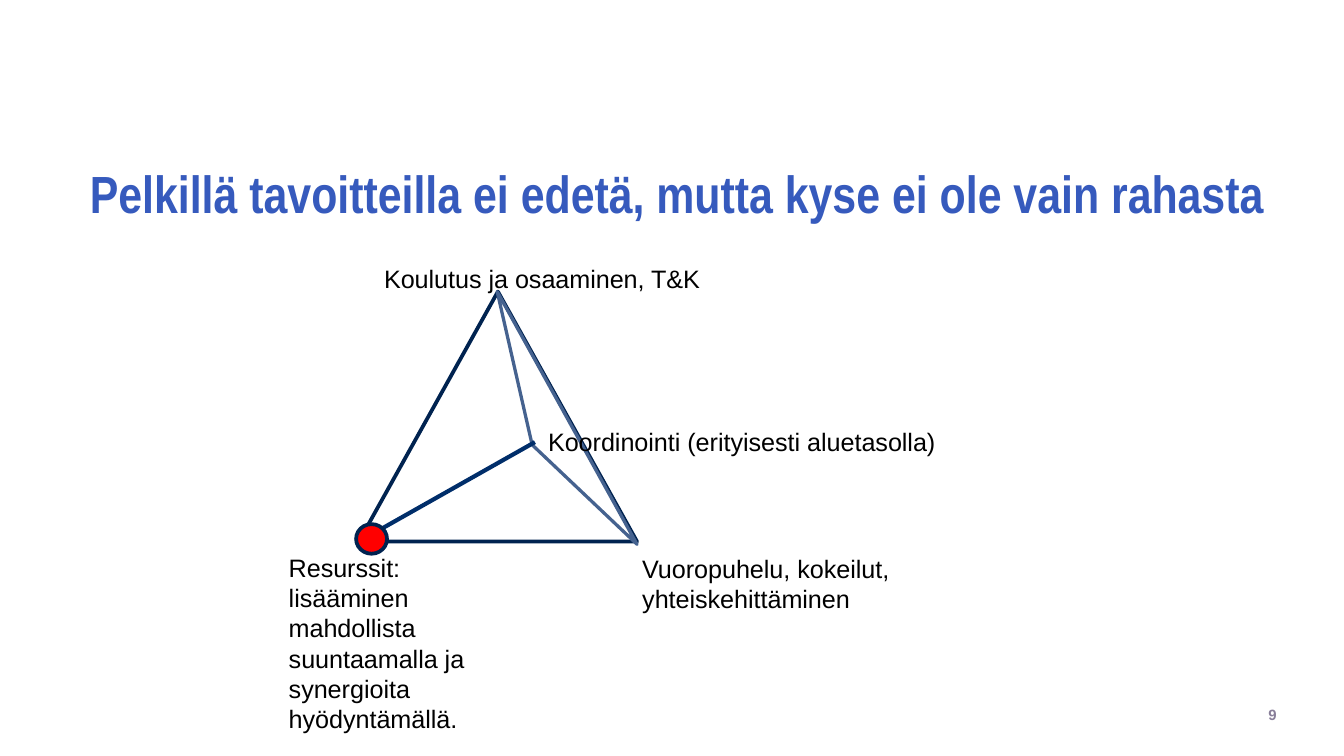
"""Build a slide with a pyramid of four linked success factors."""
from lxml import etree
from pptx import Presentation
from pptx.dml.color import RGBColor
from pptx.enum.shapes import MSO_CONNECTOR, MSO_SHAPE
from pptx.enum.text import MSO_ANCHOR, PP_ALIGN
from pptx.oxml.ns import qn
from pptx.util import Inches, Pt

STRAIGHT = MSO_CONNECTOR.STRAIGHT
TRIANGLE, OVAL = MSO_SHAPE.ISOSCELES_TRIANGLE, MSO_SHAPE.OVAL
TOP, MIDDLE, BOTTOM = MSO_ANCHOR.TOP, MSO_ANCHOR.MIDDLE, MSO_ANCHOR.BOTTOM
LEFT, RIGHT = PP_ALIGN.LEFT, PP_ALIGN.RIGHT

BLUE = RGBColor(0x36, 0x5A, 0xBD)
NAVY = RGBColor(0x00, 0x23, 0x50)
EDGE_BLUE = RGBColor(0x00, 0x2E, 0x6A)
SLATE = RGBColor(0x45, 0x62, 0x8F)
GREY = RGBColor(0x88, 0x7E, 0x99)
RED = RGBColor(0xFF, 0x00, 0x00)
BLACK = RGBColor(0x00, 0x00, 0x00)

TITLE = "Pelkillä tavoitteilla ei edetä, mutta kyse ei ole vain rahasta"
PAGE_NUMBER = "9"
LABELS = [
    ("Resurssit: lisääminen mahdollista suuntaamalla ja synergioita hyödyntämällä.",
     (2.05, 4.06, 1.78, 1.46)),
    ("Koordinointi (erityisesti aluetasolla)", (3.98, 3.12, 5, 0.33)),
    ("Koulutus ja osaaminen, T&K", (2.76, 1.91, 2.64, 0.33)),
    ("Vuoropuhelu, kokeilut, yhteiskehittäminen", (4.68, 4.07, 2.71, 0.56)),
]
FRONT_FACE = (2.67, 2.17, 2.07, 1.86)
SIDE_FACE = [(3.7, 2.17), (3.96, 3.31), (4.74, 4.05)]
INNER_EDGE = (2.67, 4.03, 3.98, 3.29)
RESOURCE_DOT = (2.65, 3.9, 0.23, 0.22)


def inches(values):
    return [Inches(v) for v in values]


def add_text(s, text, box, size, color, font="Arial", bold=False, anchor=TOP, align=LEFT):
    tf = s.shapes.add_textbox(*inches(box)).text_frame
    tf.word_wrap = True
    tf.vertical_anchor = anchor
    p = tf.paragraphs[0]
    p.text = text
    p.alignment = align
    p.font.name, p.font.size, p.font.bold = font, Pt(size), bold
    p.font.color.rgb = color
    return tf


def style(sp, color, width, fill=None):
    sp.shadow.inherit = False
    sp.line.color.rgb = color
    sp.line.width = Pt(width)
    if fill is None:
        sp.fill.background()
    else:
        sp.fill.solid()
        sp.fill.fore_color.rgb = fill


def main():
    prs = Presentation()
    prs.slide_width = Inches(10)
    prs.slide_height = prs.slide_width * 9 // 16
    s = prs.slides.add_slide(prs.slide_layouts[6])

    title = add_text(s, TITLE, (0.57, 0.8, 9, 0.93), 28, BLUE, "Arial Narrow", True, BOTTOM)
    title.paragraphs[0].line_spacing = 0.95
    number = add_text(s, PAGE_NUMBER, (9.08, 5.22, 0.42, 0.19), 8, GREY,
                      bold=True, anchor=MIDDLE, align=RIGHT)
    number.margin_left = number.margin_right = number.margin_top = number.margin_bottom = 0

    style(s.shapes.add_shape(TRIANGLE, *inches(FRONT_FACE)), NAVY, 2)
    start, *rest = [inches(point) for point in SIDE_FACE]
    builder = s.shapes.build_freeform(*start)
    builder.add_line_segments(rest, close=True)
    style(builder.convert_to_shape(), SLATE, 1.75)

    edge = s.shapes.add_connector(STRAIGHT, *inches(INNER_EDGE))
    edge.line.color.rgb = EDGE_BLUE
    edge.line.width = Pt(2.25)
    etree.SubElement(edge._element.spPr, qn("a:effectLst"))

    for text, box in LABELS:
        add_text(s, text, box, 13.5, BLACK)
    style(s.shapes.add_shape(OVAL, *inches(RESOURCE_DOT)), NAVY, 2, RED)

    prs.save("out.pptx")


if __name__ == "__main__":
    main()
